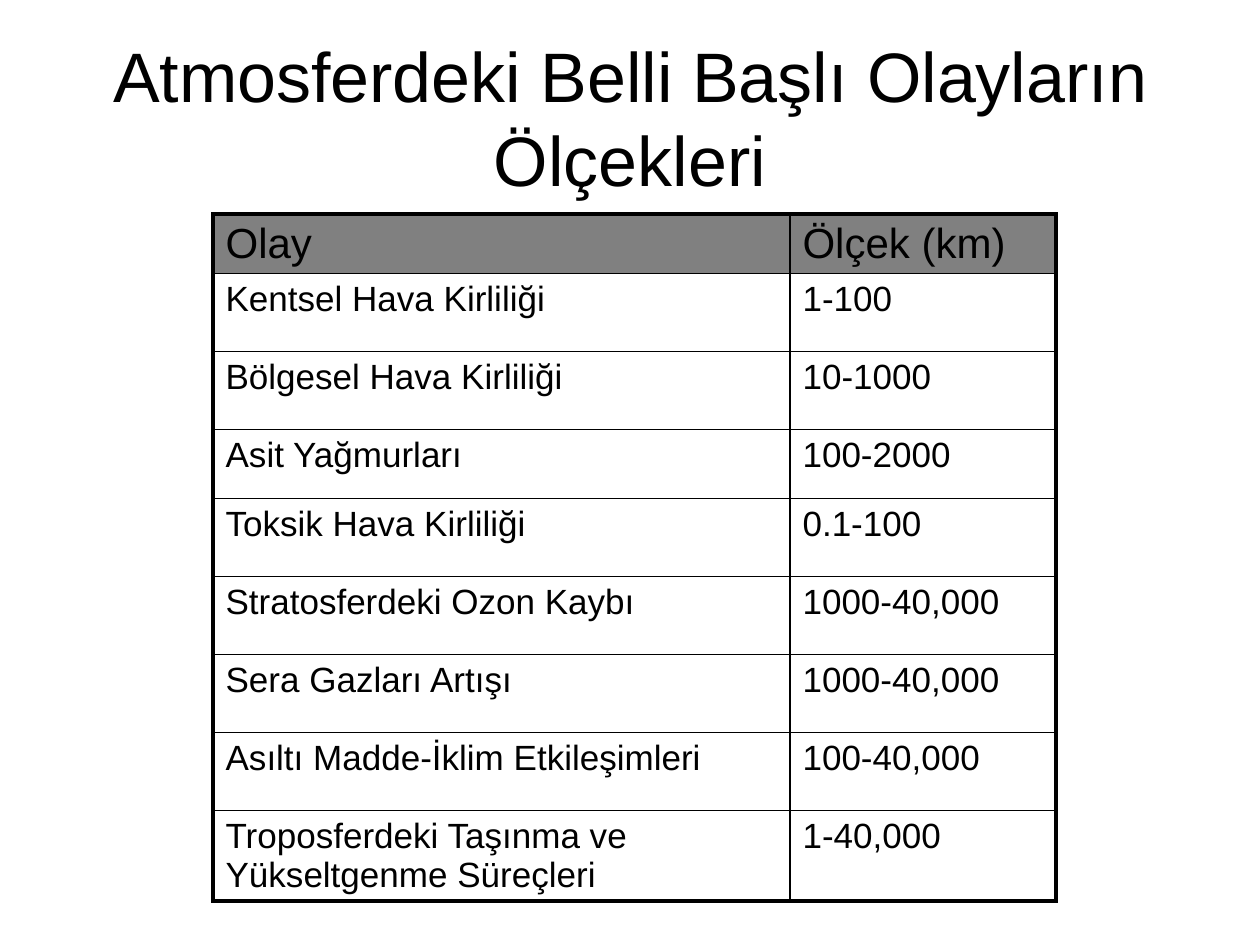
from lxml import etree
from pptx import Presentation
from pptx.dml.color import RGBColor
from pptx.enum.text import MSO_ANCHOR, PP_ALIGN
from pptx.oxml.ns import qn
from pptx.util import Pt

CENTER = PP_ALIGN.CENTER
MIDDLE = MSO_ANCHOR.MIDDLE
PX = 914400 / 126
COLORS = {"ink": "000000", "head": "808080"}
THIN, THICK = 1, 2.25
COLS = [577, 266]
ROWS = [59, 78, 78, 69, 78, 78, 78, 78, 78]
DATA = [
    ("Olay", "Ölçek (km)"),
    ("Kentsel Hava Kirliliği", "1-100"),
    ("Bölgesel Hava Kirliliği", "10-1000"),
    ("Asit Yağmurları", "100-2000"),
    ("Toksik Hava Kirliliği", "0.1-100"),
    ("Stratosferdeki Ozon Kaybı", "1000-40,000"),
    ("Sera Gazları Artışı", "1000-40,000"),
    ("Asıltı Madde-İklim Etkileşimleri", "100-40,000"),
    ("Troposferdeki Taşınma ve Yükseltgenme Süreçleri", "1-40,000"),
]


def emu(px):
    return round(px * PX)


def write(para, text, size):
    run = para.add_run()
    run.text = text
    style = {"name": "Arial", "size": Pt(size), "bold": False}
    for key, value in style.items():
        setattr(run.font, key, value)
    run.font.color.rgb = RGBColor.from_string(COLORS["ink"])


def add_title(slide, box):
    title = slide.shapes.title
    for key, value in zip(("left", "top", "width", "height"), box):
        setattr(title, key, emu(value))
    frame = title.text_frame
    for key, value in {"word_wrap": True, "vertical_anchor": MIDDLE}.items():
        setattr(frame, key, value)
    para = frame.paragraphs[0]
    para.alignment = CENTER
    write(para, "Atmosferdeki Belli Başlı Olayların Ölçekleri", 40)


def add_edges(cell, edges):
    props = cell._tc.get_or_add_tcPr()
    for side, width in edges.items():
        line = etree.SubElement(props, qn(f"a:ln{side}"), w=str(Pt(width)))
        fill = etree.SubElement(line, qn("a:solidFill"))
        etree.SubElement(fill, qn("a:srgbClr"), val=COLORS["ink"])


def fill_cell(cell, text, head):
    para = cell.text_frame.paragraphs[0]
    gap = etree.SubElement(para._p.get_or_add_pPr(), qn("a:spcBef"))
    etree.SubElement(gap, qn("a:spcPct"), val="20000")
    write(para, text, 24 if head else 20)
    if head:
        cell.fill.solid()
        cell.fill.fore_color.rgb = RGBColor.from_string(COLORS["head"])
    else:
        cell.fill.background()


def add_grid(slide, left, top):
    box = [emu(v) for v in (left, top, sum(COLS), sum(ROWS))]
    table = slide.shapes.add_table(len(ROWS), len(COLS), *box).table
    for key in ("first_row", "horz_banding"):
        setattr(table, key, False)
    for col, width in zip(table.columns, COLS):
        col.width = emu(width)
    for row, height in zip(table.rows, ROWS):
        row.height = emu(height)
    for r, texts in enumerate(DATA):
        for c, text in enumerate(texts):
            cell = table.cell(r, c)
            outer = {
                "L": c == 0,
                "R": c == len(COLS) - 1,
                "T": r == 0,
                "B": r == len(ROWS) - 1,
            }
            add_edges(cell, {k: THICK if v else THIN for k, v in outer.items()})
            fill_cell(cell, text, r == 0)


def main():
    deck = Presentation()
    deck.slide_width, deck.slide_height = emu(1260), emu(945)
    slide = deck.slides.add_slide(deck.slide_layouts[5])
    add_title(slide, (63, 38, 1134, 158))
    add_grid(slide, 213, 214)
    deck.save("out.pptx")


if __name__ == "__main__":
    main()
